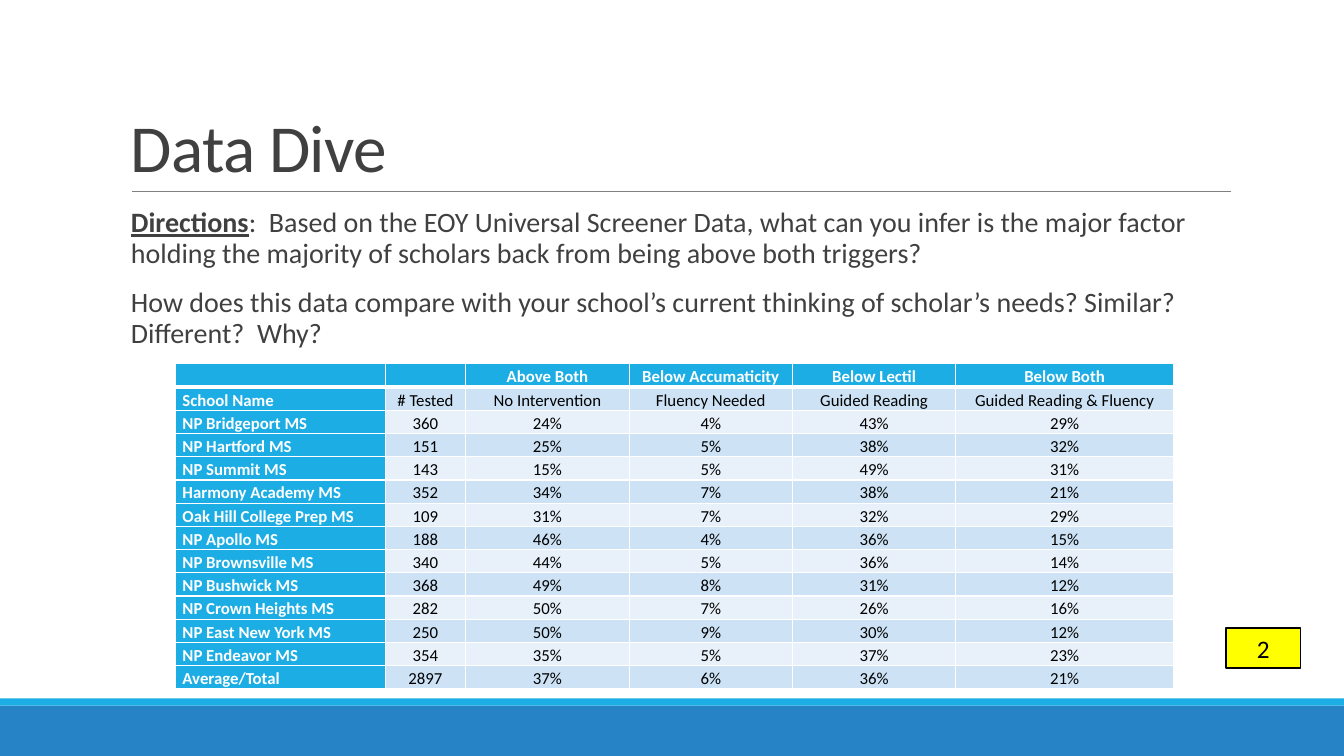
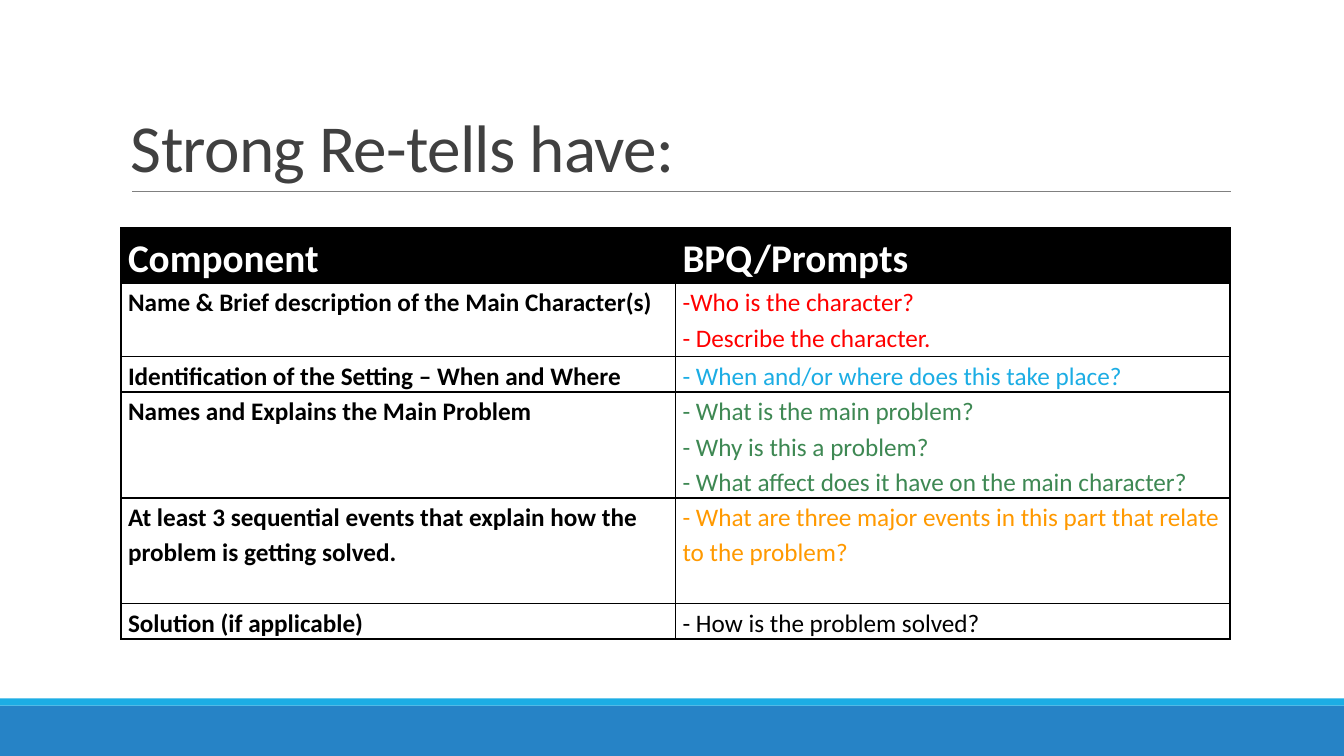
import pptx
import pptx.dml.color
import pptx.enum.shapes
import pptx.enum.text
import pptx.oxml.ns
import pptx.util
from lxml import etree

Inches, Pt = pptx.util.Inches, pptx.util.Pt
ALIGN = pptx.enum.text.PP_ALIGN
ANCHOR = pptx.enum.text.MSO_ANCHOR
RECTANGLE = pptx.enum.shapes.MSO_SHAPE.RECTANGLE
STRAIGHT = pptx.enum.shapes.MSO_CONNECTOR.STRAIGHT

# Palette
WHITE, BLACK, INK, RULE = "FFFFFF", "000000", "404040", "808080"
SKY, BLUE = "1CADE4", "2683C6"
BAND_DARK, BAND_LIGHT = "CDE3F5", "E8F1FA"
RED, GREEN, ORANGE, YELLOW = "FF0000", "3E8853", "FF9900", "FFFF00"


def color(hex_string):
    return pptx.dml.color.RGBColor.from_string(hex_string)


def sub(parent, tag, **attributes):
    return etree.SubElement(parent, pptx.oxml.ns.qn(tag), attributes)


class Deck:
    """Shared style plus the slide being drawn."""

    font = "Calibri"
    left, width = 1.2, 11

    def __init__(self):
        self.prs = pptx.Presentation()
        self.prs.slide_width = Inches(13.33)
        self.prs.slide_height = Inches(7.5)
        self.slide = None

    def new_slide(self, title):
        self.slide = self.prs.slides.add_slide(self.prs.slide_layouts[6])
        # Footer bands
        self.box(0, 7, 13.33, 0.5, BLUE)
        self.box(0, 6.93, 13.33, 0.07, SKY)
        # Rule under the title
        rule = self.slide.shapes.add_connector(
            STRAIGHT, Inches(1.31), Inches(1.9), Inches(12.21), Inches(1.9))
        rule.line.color.rgb = color(RULE)
        rule.line.width = Pt(0.5)
        sub(rule._element.spPr, "a:effectLst")
        # Title
        frame = self.text_frame(0.31, 1.59, ANCHOR.BOTTOM)
        paragraph = frame.paragraphs[0]
        paragraph.line_spacing = 0.85
        run = self.run(paragraph, title, 48, INK)
        run._r.get_or_add_rPr().set("spc", "-50")

    def box(self, left, top, width, height, fill, line=None):
        shape = self.slide.shapes.add_shape(
            RECTANGLE, Inches(left), Inches(top), Inches(width), Inches(height))
        shape.shadow.inherit = False
        shape.fill.solid()
        shape.fill.fore_color.rgb = color(fill)
        if line:
            shape.line.color.rgb = color(line)
            shape.line.width = Pt(1.25)
        else:
            shape.line.fill.background()
        return shape

    def text_frame(self, top, height, anchor):
        frame = self.slide.shapes.add_textbox(
            Inches(self.left), Inches(top), Inches(self.width), Inches(height)).text_frame
        frame.word_wrap = True
        frame.vertical_anchor = anchor
        return frame

    def run(self, paragraph, text, size, ink, bold=False, underline=False):
        run = paragraph.add_run()
        run.text = text
        run.font.name = self.font
        run.font.size = Pt(size)
        run.font.color.rgb = color(ink)
        run.font.bold = bold
        run.font.underline = underline
        return run

    def body(self, top, height, paragraphs):
        """Each paragraph is a list of (text, emphasised) pairs."""
        frame = self.text_frame(top, height, ANCHOR.TOP)
        for i, pieces in enumerate(paragraphs):
            paragraph = frame.add_paragraph() if i else frame.paragraphs[0]
            paragraph.line_spacing = 0.9
            paragraph.space_before = Pt(12 if i else 0)
            paragraph.space_after = Pt(2)
            for text, emphasised in pieces:
                self.run(paragraph, text, 20, INK, emphasised, emphasised)

    def badge(self, text):
        shape = self.box(12.16, 6.23, 0.74, 0.4, YELLOW, BLACK)
        paragraph = shape.text_frame.paragraphs[0]
        paragraph.alignment = ALIGN.CENTER
        self.run(paragraph, text, 18, BLACK)

    def table(self, left, top, columns, rows):
        table = self.slide.shapes.add_table(
            len(rows), len(columns), Inches(left), Inches(top),
            Inches(sum(columns)), Inches(sum(rows))).table
        table.first_row = table.horz_banding = False
        for column, width in zip(table.columns, columns):
            column.width = Inches(width)
        for row, height in zip(table.rows, rows):
            row.height = Inches(height)
        return table

    def cell(self, cell, lines, size, ink, fill, border, bold=False,
             align=ALIGN.LEFT, anchor=ANCHOR.TOP, bottom=1):
        cell.margin_left = cell.margin_right = Inches(0.07)
        cell.margin_top = cell.margin_bottom = 0
        cell.vertical_anchor = anchor
        properties = cell._tc.get_or_add_tcPr()
        for side, points in (("L", 1), ("R", 1), ("T", 1), ("B", bottom)):
            edge = sub(properties, f"a:ln{side}", w=str(Pt(points)))
            sub(sub(edge, "a:solidFill"), "a:srgbClr", val=border)
        cell.fill.solid()
        cell.fill.fore_color.rgb = color(fill)
        for i, line in enumerate(lines):
            paragraph = cell.text_frame.add_paragraph() if i else cell.text_frame.paragraphs[0]
            paragraph.alignment = align
            paragraph.line_spacing = 1.15
            if line:
                self.run(paragraph, line, size, ink, bold)
            else:
                sub(paragraph._p, "a:endParaRPr", sz=str(size * 100))


SCREENER = [
    ("", "", "Above Both", "Below Accumaticity", "Below Lectil", "Below Both"),
    ("School Name", "# Tested", "No Intervention", "Fluency Needed", "Guided Reading",
     "Guided Reading & Fluency"),
    ("NP Bridgeport MS", "360", "24%", "4%", "43%", "29%"),
    ("NP Hartford MS", "151", "25%", "5%", "38%", "32%"),
    ("NP Summit MS", "143", "15%", "5%", "49%", "31%"),
    ("Harmony Academy MS", "352", "34%", "7%", "38%", "21%"),
    ("Oak Hill College Prep MS", "109", "31%", "7%", "32%", "29%"),
    ("NP Apollo MS", "188", "46%", "4%", "36%", "15%"),
    ("NP Brownsville MS", "340", "44%", "5%", "36%", "14%"),
    ("NP Bushwick MS", "368", "49%", "8%", "31%", "12%"),
    ("NP Crown Heights MS", "282", "50%", "7%", "26%", "16%"),
    ("NP East New York MS", "250", "50%", "9%", "30%", "12%"),
    ("NP Endeavor MS", "354", "35%", "5%", "37%", "23%"),
    ("Average/Total", "2897", "37%", "6%", "36%", "21%"),
]

# Row height, component, prompt colour, prompts
RETELL = [
    (0.73, "Name & Brief description of the Main Character(s)", RED,
     ["-Who is the character?", "- Describe the character."]),
    (0.35, "Identification of the Setting – When and Where", SKY,
     ["- When and/or where does this take place?"]),
    (1.05, "Names and Explains the Main Problem", GREEN,
     ["- What is the main problem?", "- Why is this a problem?",
      "- What affect does it have on the main character?"]),
    (1.05, "At least 3 sequential events that explain how the problem is getting solved.",
     ORANGE, ["- What are three major events in this part that relate to the problem?"]),
    (0.35, "Solution (if applicable)", BLACK, ["- How is the problem solved?"]),
]


def data_dive(deck):
    deck.new_slide("Data Dive")
    deck.body(2.02, 1.59, [
        [("Directions", True),
         (":  Based on the EOY Universal Screener Data, what can you infer is the major "
          "factor holding the majority of scholars back from being above both triggers?",
          False)],
        [("How does this data compare with your school’s current thinking of scholar’s "
          "needs? Similar?  Different?  Why?", False)],
    ])
    # Screener results: header row and school column in blue, the rest banded
    table = deck.table(1.74, 3.61, [2.08, 0.8, 1.62, 1.62, 1.62, 2.16],
                       [0.23] * len(SCREENER))
    for r, values in enumerate(SCREENER):
        for c, value in enumerate(values):
            heading = r == 0 or c == 0
            band = BAND_DARK if r % 2 else BAND_LIGHT
            deck.cell(table.cell(r, c), [value], 12, WHITE if heading else BLACK,
                      SKY if heading else band, WHITE, bold=heading,
                      align=ALIGN.CENTER if c else ALIGN.LEFT,
                      anchor=ANCHOR.BOTTOM, bottom=1 if r else 3)
    deck.badge("2")


def strong_retells(deck):
    deck.new_slide("Strong Re-tells have:")
    table = deck.table(deck.left, 2.26, [deck.width / 2] * 2,
                       [0.55] + [row[0] for row in RETELL])
    for c, heading in enumerate(("Component", "BPQ/Prompts")):
        deck.cell(table.cell(0, c), [heading], 28, WHITE, BLACK, BLACK, bold=True)
    for r, (_, component, ink, prompts) in enumerate(RETELL, 1):
        deck.cell(table.cell(r, 0), [component], 18, BLACK, WHITE, BLACK, bold=True)
        deck.cell(table.cell(r, 1), prompts, 18, ink, WHITE, BLACK)


def main():
    deck = Deck()
    data_dive(deck)
    strong_retells(deck)
    deck.prs.save("out.pptx")


if __name__ == "__main__":
    main()
